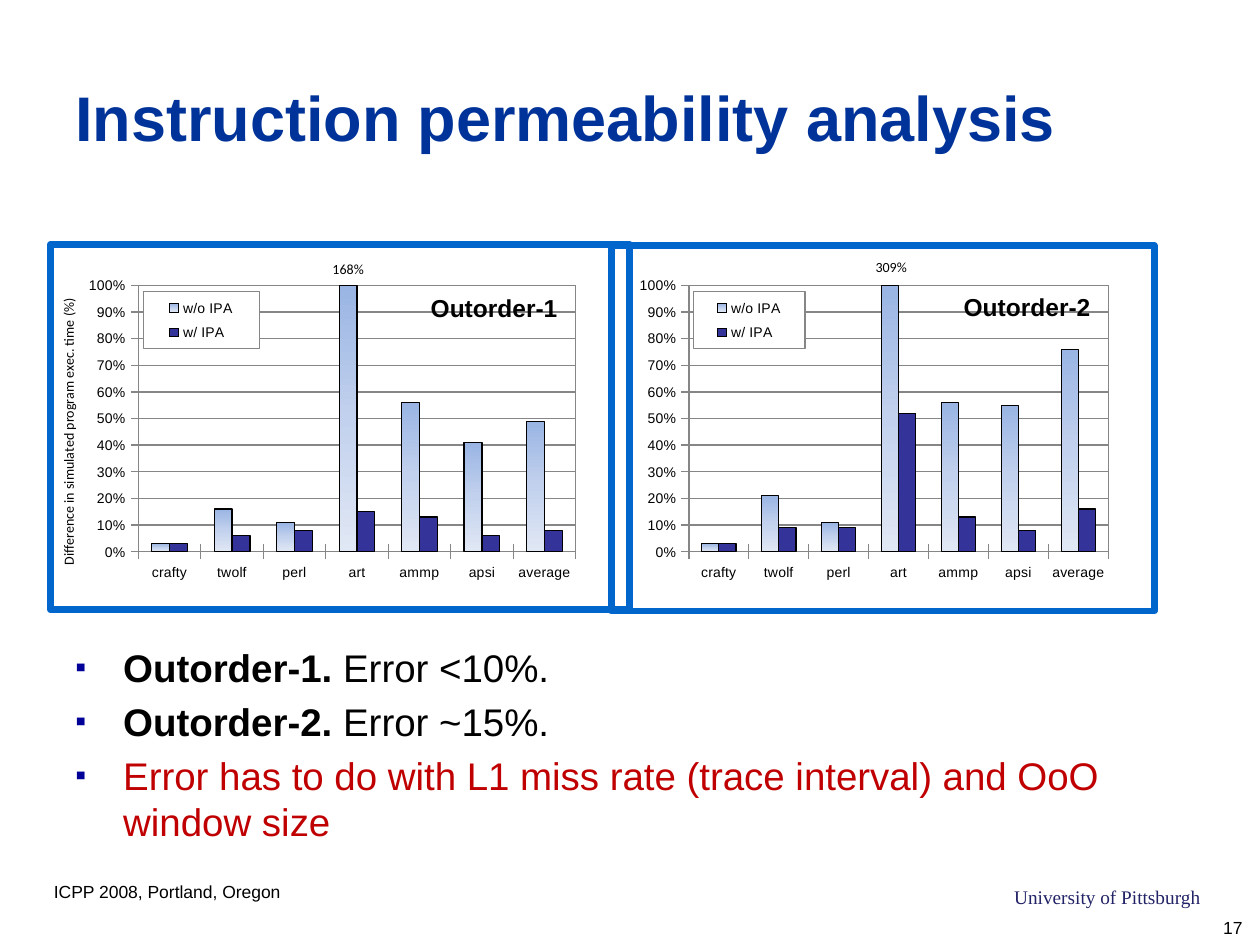
from pptx import Presentation
from pptx.chart.data import CategoryChartData
from pptx.dml.color import RGBColor
from pptx.enum.chart import XL_CHART_TYPE, XL_LEGEND_POSITION, XL_TICK_MARK
from pptx.enum.shapes import MSO_SHAPE
from pptx.enum.text import MSO_ANCHOR
from pptx.oxml import parse_xml
from pptx.oxml.ns import nsdecls, qn
from pptx.util import Inches, Pt
from lxml.etree import SubElement

BLACK = RGBColor(0x00, 0x00, 0x00)
TITLE_BLUE = RGBColor(0x00, 0x33, 0x99)
FRAME_BLUE = RGBColor(0x00, 0x66, 0xCC)
BULLET_BLUE = RGBColor(0x00, 0x00, 0x99)
BAR_BLUE = RGBColor(0x33, 0x33, 0x99)
FOOTER_BLUE = RGBColor(0x22, 0x22, 0x67)
RED = RGBColor(0xC0, 0x00, 0x00)
GREY = RGBColor(0x86, 0x86, 0x86)
WHITE = RGBColor(0xFF, 0xFF, 0xFF)
GRADIENT = [(0, RGBColor(0x9A, 0xB5, 0xE4)), (50, RGBColor(0xC2, 0xD1, 0xED)),
            (100, RGBColor(0xE1, 0xE8, 0xF5))]

PROGRAMS = ["crafty", "twolf", "perl", "art", "ammp", "apsi", "average"]
OUTORDER_1 = {"w/o IPA": [0.03, 0.16, 0.11, 1.68, 0.56, 0.41, 0.49],
              "w/ IPA": [0.03, 0.06, 0.08, 0.15, 0.13, 0.06, 0.08]}
OUTORDER_2 = {"w/o IPA": [0.03, 0.21, 0.11, 3.09, 0.56, 0.55, 0.76],
              "w/ IPA": [0.03, 0.09, 0.09, 0.52, 0.13, 0.08, 0.16]}
FINDINGS = [[("Outorder-1.", True, BLACK), (" Error <10%.", False, BLACK)],
            [("Outorder-2.", True, BLACK), (" Error ~15%.", False, BLACK)],
            [("Error has to do with L1 miss rate (trace interval) and OoO window size",
              False, RED)]]


def add_span(para, text, size, color=BLACK, bold=False, font="Arial"):
    span = para.add_run()
    span.text = text
    span.font.size = Pt(size)
    span.font.name = font
    span.font.bold = bold
    span.font.color.rgb = color


def add_label(page, box, text, size, wrap=False, **style):
    label = page.shapes.add_textbox(*map(Inches, box))
    label.text_frame.word_wrap = wrap
    add_span(label.text_frame.paragraphs[0], text, size, **style)
    return label


def layout_xml(x, y, width, height, inner=False):
    target = '<c:layoutTarget val="inner"/>' if inner else ""
    return parse_xml(
        f'<c:layout {nsdecls("c")}><c:manualLayout>{target}'
        '<c:xMode val="edge"/><c:yMode val="edge"/>'
        f'<c:x val="{x}"/><c:y val="{y}"/><c:w val="{width}"/><c:h val="{height}"/>'
        '</c:manualLayout></c:layout>')


def outline_xml(fill):
    return parse_xml(
        f'<c:spPr {nsdecls("c", "a")}>{fill}<a:ln w="9525"><a:solidFill>'
        f'<a:srgbClr val="{GREY}"/></a:solidFill></a:ln></c:spPr>')


def style_gradient(fill):
    fill.gradient()
    fill.gradient_angle = 270
    stops = fill.gradient_stops[0]._gs.getparent()
    for stop in list(stops):
        stops.remove(stop)
    for position, color in GRADIENT:
        stop = SubElement(stops, qn("a:gs"), pos=str(position * 1000))
        SubElement(stop, qn("a:srgbClr"), val=str(color))


def style_axes(chart):
    values = chart.value_axis
    values.minimum_scale = 0
    values.maximum_scale = 1
    values.major_unit = 0.1
    values.tick_labels.number_format = "0%"
    values.tick_labels.number_format_is_linked = False
    values.major_gridlines.format.line.color.rgb = GREY
    for axis in (values, chart.category_axis):
        axis.major_tick_mark = XL_TICK_MARK.CROSS
        axis.format.line.color.rgb = GREY


def style_legend(chart):
    chart.has_legend = True
    legend = chart.legend
    legend.position = XL_LEGEND_POSITION.RIGHT
    legend.include_in_layout = False
    legend.font.size = Pt(8)
    element = legend._element
    for old in element.findall(qn("c:layout")):
        element.remove(old)
    element.find(qn("c:legendPos")).addnext(layout_xml(0.12, 0.07, 0.21, 0.17))
    white = f'<a:solidFill><a:srgbClr val="{WHITE}"/></a:solidFill>'
    element.find(qn("c:txPr")).addprevious(outline_xml(white))


def add_bars(page, box, results):
    data = CategoryChartData(number_format="0%")
    data.categories = PROGRAMS
    for name, values in results.items():
        data.add_series(name, values)
    chart = page.shapes.add_chart(
        XL_CHART_TYPE.COLUMN_CLUSTERED, *map(Inches, box), data).chart
    chart.has_title = False
    chart.font.size = Pt(8)
    chart.font.name = "Arial"
    chart.font.color.rgb = BLACK
    style_axes(chart)
    style_legend(chart)

    plot = chart.plots[0]
    plot.gap_width = 150
    plot.overlap = 0
    plot.vary_by_categories = False
    without, with_analysis = plot.series
    style_gradient(without.format.fill)
    with_analysis.format.fill.solid()
    with_analysis.format.fill.fore_color.rgb = BAR_BLUE
    for series in plot.series:
        series.format.line.color.rgb = BLACK
        series.format.line.width = Pt(0.75)

    area = chart._chartSpace.chart.plotArea
    for old in area.findall(qn("c:layout")):
        area.remove(old)
    area.insert(0, layout_xml(0.111, 0.051, 0.791, 0.798, inner=True))
    area.append(outline_xml("<a:noFill/>"))


def add_frame(page, box):
    frame = page.shapes.add_shape(MSO_SHAPE.RECTANGLE, *map(Inches, box))
    frame.shadow.inherit = False
    frame.fill.background()
    frame.line.color.rgb = FRAME_BLUE
    frame.line.width = Pt(4)


def add_panel(page, frame, chart, results, peak, peak_box, name, name_box):
    add_bars(page, chart, results)
    add_label(page, peak_box, peak, 8, font="Calibri")
    add_frame(page, frame)
    add_label(page, name_box, name, 14, bold=True)


def add_title(page, box):
    title = add_label(page, box, "Instruction permeability analysis", 36, wrap=True,
                      color=TITLE_BLUE, bold=True)
    title.text_frame.vertical_anchor = MSO_ANCHOR.MIDDLE


def add_findings(page, box):
    frame = page.shapes.add_textbox(*map(Inches, box)).text_frame
    frame.word_wrap = True
    for index, finding in enumerate(FINDINGS):
        para = frame.add_paragraph() if index else frame.paragraphs[0]
        properties = para._p.get_or_add_pPr()
        properties.set("marL", str(Inches(0.38)))
        properties.set("indent", str(-Inches(0.38)))
        color = SubElement(properties, qn("a:buClr"))
        SubElement(color, qn("a:srgbClr"), val=str(BULLET_BLUE))
        SubElement(properties, qn("a:buSzPct"), val="80000")
        SubElement(properties, qn("a:buFont"), typeface="Arial")
        SubElement(properties, qn("a:buChar"), char="▪")
        if index:
            para.space_before = Pt(4.5)
        for text, bold, text_color in finding:
            add_span(para, text, 22, text_color, bold)


def add_footer(page):
    add_label(page, (0.33, 6.94, 2, 0.27), "ICPP 2008, Portland, Oregon", 10)
    add_label(page, (7.95, 6.98, 1.69, 0.29), "University of Pittsburgh", 11,
              color=FOOTER_BLUE, font="Times New Roman")
    add_label(page, (9.61, 7.23, 0.39, 0.27), "17", 10)


def main():
    deck = Presentation()
    deck.slide_width, deck.slide_height = Inches(10), Inches(7.5)
    page = deck.slides.add_slide(deck.slide_layouts[6])
    add_footer(page)
    add_title(page, (0.5, 0.3, 9, 1.25))
    axis_title = add_label(page, (-0.63, 3.29, 2.35, 0.24),
                           "Difference in simulated program exec. time (%)", 8,
                           font="Calibri")
    axis_title.rotation = 270
    add_panel(page, (0.4, 1.94, 4.6, 2.9), (0.61, 2.13, 4.39, 2.65), OUTORDER_1,
              "168%", (2.54, 2.02, 0.45, 0.24), "Outorder-1", (3.32, 2.28, 1.24, 0.34))
    add_panel(page, (4.85, 1.95, 4.31, 2.9), (5, 2.13, 4.21, 2.65), OUTORDER_2,
              "309%", (6.85, 2, 0.45, 0.24), "Outorder-2", (7.55, 2.27, 1.24, 0.34))
    add_findings(page, (0.5, 5.06, 9, 1.72))
    deck.save("out.pptx")


if __name__ == "__main__":
    main()
